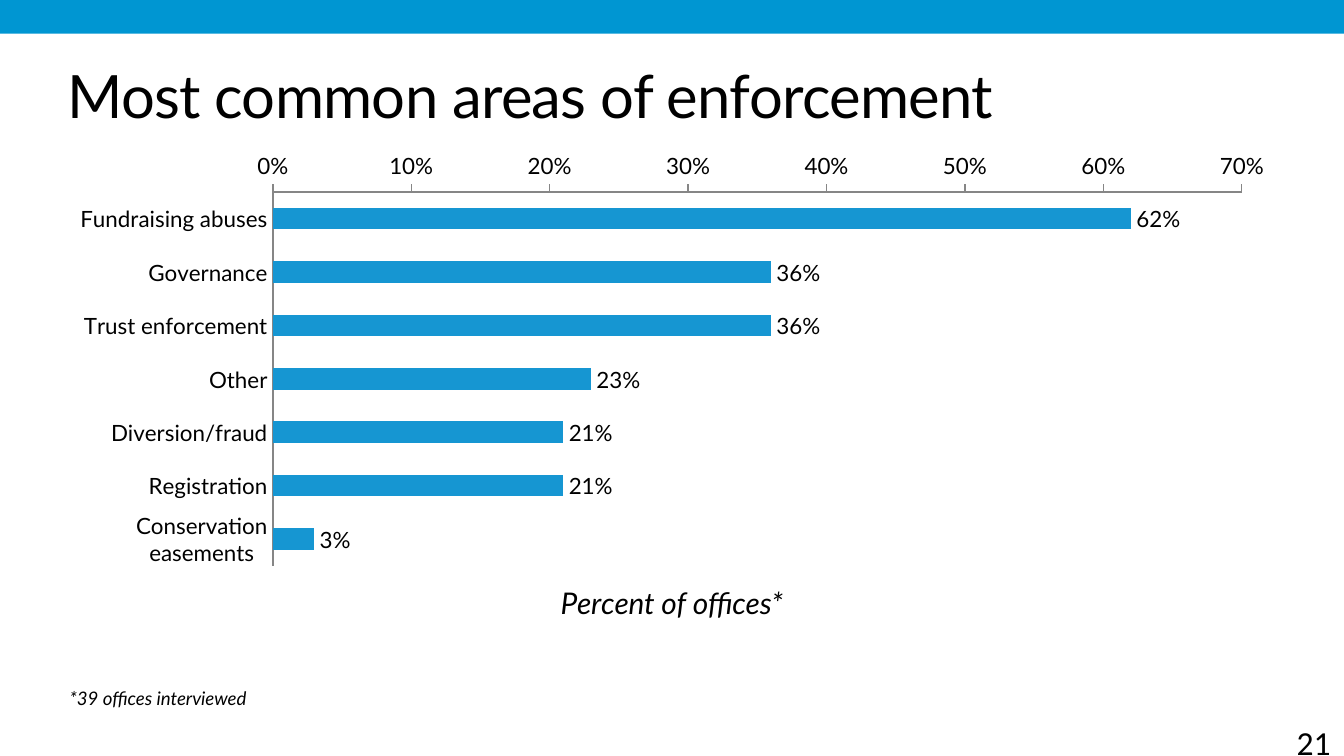
from dataclasses import dataclass

from lxml.etree import SubElement
from pptx import Presentation
from pptx.chart.data import CategoryChartData
from pptx.dml.color import RGBColor
from pptx.enum.chart import XL_CHART_TYPE, XL_LABEL_POSITION, XL_TICK_MARK
from pptx.enum.shapes import MSO_SHAPE
from pptx.enum.text import MSO_ANCHOR, PP_ALIGN
from pptx.oxml.ns import qn
from pptx.util import Inches, Pt


@dataclass(frozen=True)
class Theme:
    """Colours, fonts and type sizes of the slide."""

    band: RGBColor = RGBColor(0x00, 0x96, 0xD2)
    bar: RGBColor = RGBColor(0x16, 0x96, 0xD2)
    ink: RGBColor = RGBColor(0, 0, 0)
    axis: RGBColor = RGBColor(0x86, 0x86, 0x86)
    face: str = "Lato"
    plain: str = "Calibri"
    title: int = 32
    page: int = 18
    caption: int = 16
    label: int = 12
    note: int = 10


THEME = Theme()
WIDTH = Inches(10)
AREAS = {
    "Fundraising abuses": 0.62,
    "Governance": 0.36,
    "Trust enforcement": 0.36,
    "Other": 0.23,
    "Diversion/fraud": 0.21,
    "Registration": 0.21,
    "Conservation easements": 0.03,
}
FRAME = (0.42, 1.06, 9.17, 3.75)
PLOT = (2.03, 1.43, 7.21, 2.78)


def style(font, size, face=THEME.face, italic=False):
    """Set the face, size, slant and colour of a font."""
    font.name = face
    font.size = Pt(size)
    font.bold = False
    font.italic = italic
    font.color.rgb = THEME.ink


def add_run(para, text, size, **look):
    """Add one styled run to a paragraph."""
    run = para.add_run()
    run.text = text
    style(run.font, size, **look)
    return run


def add_band(slide):
    """Draw the colour band along the top edge."""
    band = slide.shapes.add_shape(
        MSO_SHAPE.RECTANGLE, 0, 0, WIDTH, Inches(0.25))
    band.shadow.inherit = False
    band.fill.solid()
    band.fill.fore_color.rgb = THEME.band
    band.line.fill.background()


def set_title(slide, text):
    """Place and fill the title placeholder."""
    title = slide.shapes.title
    title.left, title.top = Inches(0.5), Inches(0.44)
    title.width, title.height = Inches(9), Inches(0.47)
    frame = title.text_frame
    frame.margin_left = frame.margin_right = 0
    frame.margin_top = frame.margin_bottom = 0
    frame.vertical_anchor = MSO_ANCHOR.TOP
    para = frame.paragraphs[0]
    para.alignment = PP_ALIGN.LEFT
    run = add_run(para, text, THEME.title)
    run.font._element.set("spc", "-40")


def add_text(slide, box, text, size, align=PP_ALIGN.LEFT, **look):
    """Add a text box that holds one line."""
    shape = slide.shapes.add_textbox(*map(Inches, box))
    shape.text_frame.word_wrap = True
    para = shape.text_frame.paragraphs[0]
    para.alignment = align
    add_run(para, text, size, **look)


def set_axis(axis, tick):
    """Give an axis its line, tick marks and label font."""
    axis.has_major_gridlines = False
    axis.major_tick_mark = tick
    axis.minor_tick_mark = XL_TICK_MARK.NONE
    axis.format.line.color.rgb = THEME.axis
    axis.format.line.width = Pt(0.75)
    style(axis.tick_labels.font, THEME.label)


def set_plot(chart):
    """Fix the inner plot area within the chart frame."""
    area = chart._chartSpace.chart.plotArea
    for old in area.findall(qn("c:layout")):
        area.remove(old)
    layout = SubElement(area, qn("c:layout"))
    area.insert(0, layout)
    manual = SubElement(layout, qn("c:manualLayout"))
    left, top, width, height = FRAME
    parts = {
        "layoutTarget": "inner",
        "xMode": "edge",
        "yMode": "edge",
        "x": (PLOT[0] - left) / width,
        "y": (PLOT[1] - top) / height,
        "w": PLOT[2] / width,
        "h": PLOT[3] / height,
    }
    for name, value in parts.items():
        SubElement(manual, qn(f"c:{name}")).set("val", str(value))


def add_bars(slide):
    """Add the bar chart of enforcement areas."""
    data = CategoryChartData(number_format="0%")
    data.categories = list(AREAS)
    data.add_series("Series 1", list(AREAS.values()))
    chart = slide.shapes.add_chart(
        XL_CHART_TYPE.BAR_CLUSTERED, *map(Inches, FRAME), data).chart
    chart.has_legend = False
    chart.has_title = False
    style(chart.font, THEME.note)
    set_plot(chart)

    set_axis(chart.category_axis, XL_TICK_MARK.NONE)
    chart.category_axis.reverse_order = True
    scale = chart.value_axis
    set_axis(scale, XL_TICK_MARK.OUTSIDE)
    scale.minimum_scale, scale.maximum_scale = 0, 0.7
    scale.major_unit = 0.1
    scale.tick_labels.number_format = "0%"
    scale.tick_labels.number_format_is_linked = False
    para = scale.axis_title.text_frame.paragraphs[0]
    add_run(para, "Percent of offices*", THEME.caption, italic=True)

    plot = chart.plots[0]
    plot.gap_width = 150
    plot.vary_by_categories = False
    fill = plot.series[0].format.fill
    fill.solid()
    fill.fore_color.rgb = THEME.bar
    plot.has_data_labels = True
    labels = plot.data_labels
    labels.show_value = True
    labels.number_format = "0%"
    labels.number_format_is_linked = False
    labels.position = XL_LABEL_POSITION.OUTSIDE_END
    style(labels.font, THEME.label)


def main():
    """Build and save the slide."""
    deck = Presentation()
    deck.slide_width, deck.slide_height = WIDTH, WIDTH * 9 // 16
    slide = deck.slides.add_slide(deck.slide_layouts[5])
    add_band(slide)
    set_title(slide, "Most common areas of enforcement")
    add_bars(slide)
    add_text(slide, (9, 5.32, 1, 0.4), "21", THEME.page,
             align=PP_ALIGN.RIGHT, face=THEME.plain)
    add_text(slide, (0.42, 5.06, 3.67, 0.27), "*39 offices interviewed",
             THEME.note, italic=True)
    deck.save("out.pptx")


if __name__ == "__main__":
    main()
